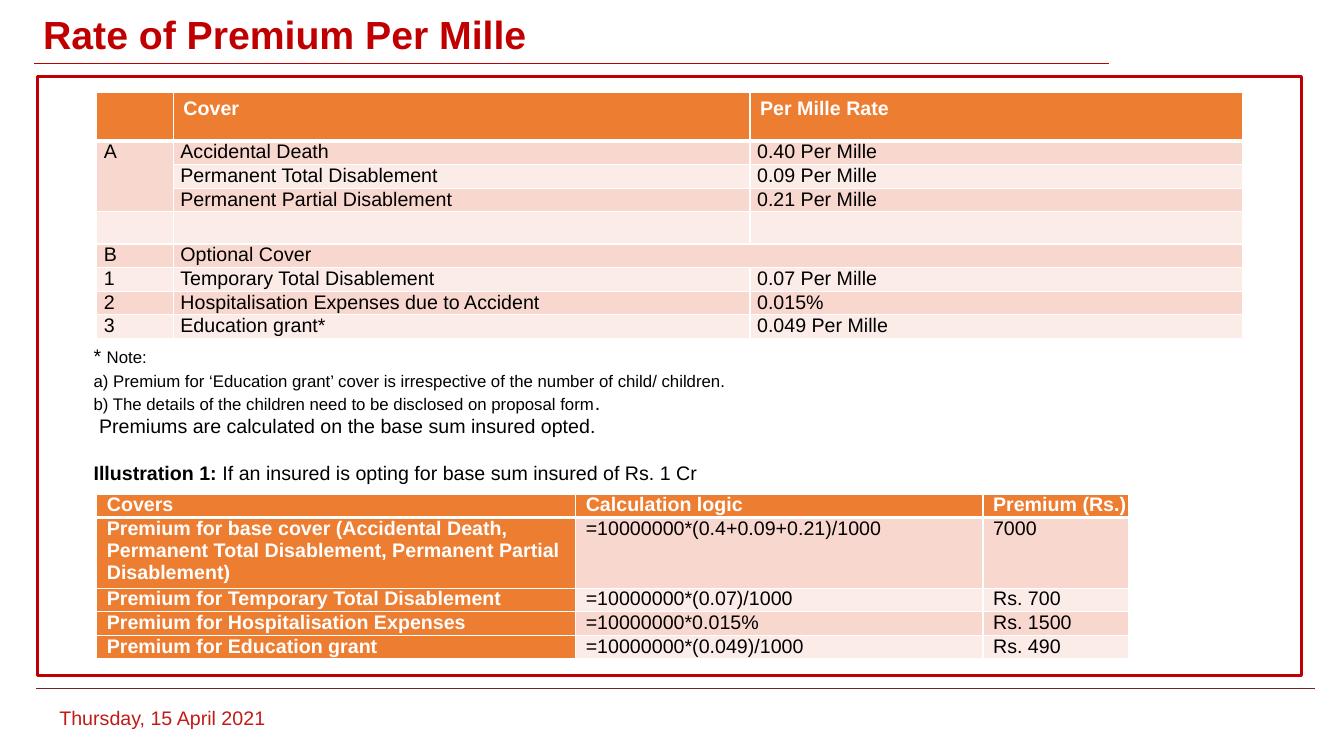
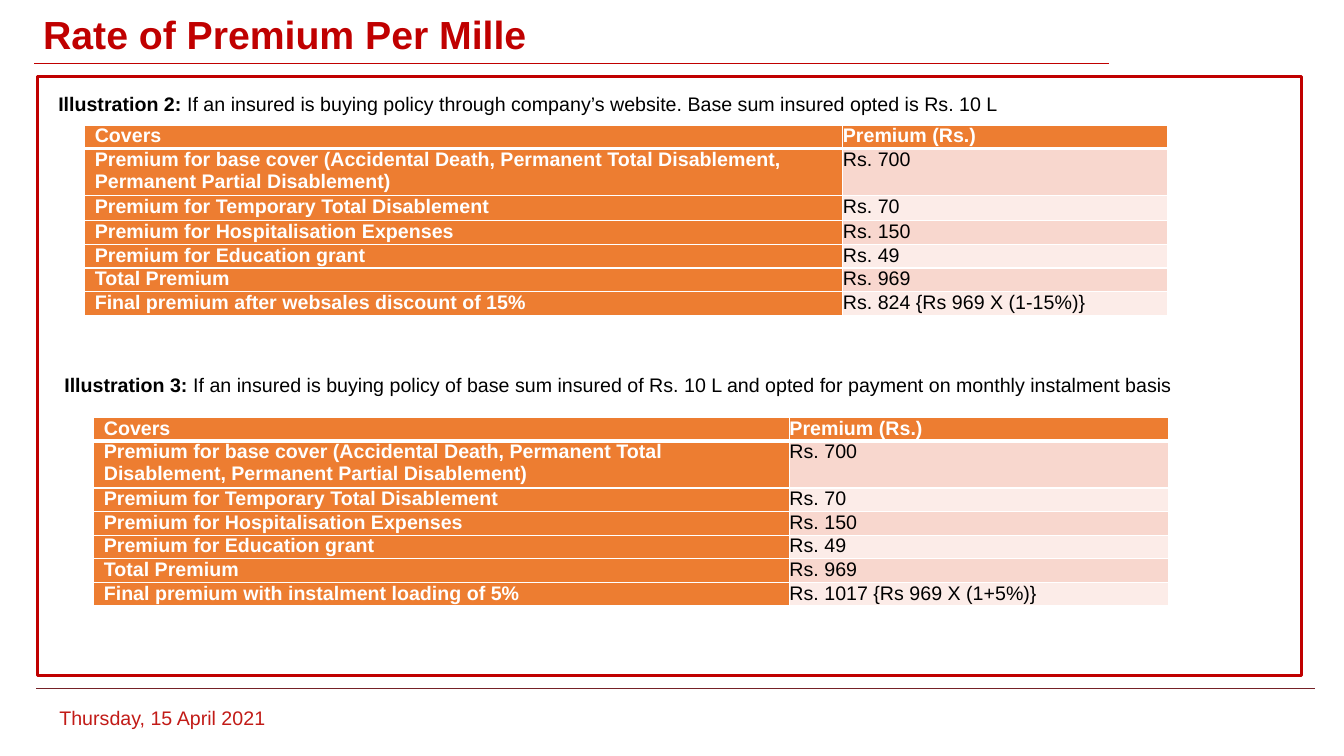
from dataclasses import dataclass

from lxml import etree
from pptx import Presentation
from pptx.dml.color import RGBColor
from pptx.enum.shapes import MSO_CONNECTOR, MSO_SHAPE
from pptx.enum.text import PP_ALIGN
from pptx.oxml.ns import qn
from pptx.util import Inches, Pt

STRAIGHT = MSO_CONNECTOR.STRAIGHT
RECTANGLE = MSO_SHAPE.RECTANGLE
LEFT, JUSTIFY = PP_ALIGN.LEFT, PP_ALIGN.JUSTIFY


@dataclass(frozen=True)
class Theme:
    font: str = "Arial"
    red: str = "C00000"
    footer_rule: str = "752127"
    date: str = "C21B17"
    orange: str = "ED7D31"
    dark_band: str = "F8D7CE"
    light_band: str = "FCECE8"
    white: str = "FFFFFF"
    black: str = "000000"
    title_size: float = 28
    body_size: float = 14
    note_size: float = 12
    rule_width: float = 0.5
    frame_width: float = 1.75
    cell_rule: float = 1
    header_rule: float = 3


THEME = Theme()
ROW = 0.22
BASE_COVER = ("Premium for base cover (Accidental Death, "
              "Permanent Total Disablement, Permanent Partial Disablement)")
TEMPORARY = "Premium for Temporary Total Disablement"
HOSPITAL = "Premium for Hospitalisation Expenses"
EDUCATION = "Premium for Education grant"

RATES = [
    ["", "Cover", "Per Mille Rate"],
    ["A", "Accidental Death", "0.40 Per Mille"],
    ["", "Permanent Total Disablement", "0.09 Per Mille"],
    ["", "Permanent Partial Disablement", "0.21 Per Mille"],
    ["", "", ""],
    ["B", "Optional Cover", ""],
    ["1", "Temporary Total Disablement", "0.07 Per Mille"],
    ["2", "Hospitalisation Expenses due to Accident", "0.015%"],
    ["3", "Education grant*", "0.049 Per Mille"],
]
CALCULATIONS = [
    ["Covers", "Calculation logic", "Premium (Rs.)"],
    [BASE_COVER, "=10000000*(0.4+0.09+0.21)/1000", "7000"],
    [TEMPORARY, "=10000000*(0.07)/1000", "Rs. 700"],
    [HOSPITAL, "=10000000*0.015%", "Rs. 1500"],
    [EDUCATION, "=10000000*(0.049)/1000", "Rs. 490"],
]
PREMIUMS = [
    ["Covers", "Premium (Rs.)"],
    [BASE_COVER, "Rs. 700"],
    [TEMPORARY, "Rs. 70"],
    [HOSPITAL, "Rs. 150"],
    [EDUCATION, "Rs. 49"],
    ["Total Premium", "Rs. 969"],
]


def color(value):
    return RGBColor.from_string(value)


def add_run(paragraph, text, size=THEME.body_size, bold=False, ink=THEME.black):
    run = paragraph.add_run()
    run.text = text
    run.font.name = THEME.font
    run.font.size = Pt(size)
    run.font.bold = bold
    run.font.color.rgb = color(ink)


def add_text(slide, box, paragraphs, align=LEFT):
    frame = slide.shapes.add_textbox(*map(Inches, box)).text_frame
    frame.word_wrap = True
    for index, (gap, runs) in enumerate(paragraphs):
        paragraph = frame.add_paragraph() if index else frame.paragraphs[0]
        paragraph.alignment = align
        if gap:
            paragraph.space_before = Pt(gap)
        for run in runs:
            add_run(paragraph, *run)
    return frame


def add_rule(slide, left, right, y, ink):
    ends = map(Inches, (left, y, right, y))
    rule = slide.shapes.add_connector(STRAIGHT, *ends)
    rule.line.color.rgb = color(ink)
    rule.line.width = Pt(THEME.rule_width)
    etree.SubElement(rule._element.spPr, qn("a:effectLst"))


def add_page(deck, title):
    slide = deck.slides.add_slide(deck.slide_layouts[6])
    add_rule(slide, 0.36, 13.04, 6.83, THEME.footer_rule)
    add_text(slide, (0.49, 6.95, 3.62, 0.34),
             [(0, [("Thursday, 15 April 2021", THEME.body_size, False, THEME.date)])])
    heading = add_text(slide, (0.33, 0.11, 11.5, 0.66),
                       [(0, [(title, THEME.title_size, True, THEME.red)])])
    heading.paragraphs[0].line_spacing = 0.9
    add_rule(slide, 0.34, 11, 0.63, THEME.red)
    frame = slide.shapes.add_shape(RECTANGLE, *map(Inches, (0.37, 0.76, 12.54, 5.94)))
    frame.shadow.inherit = False
    frame.fill.background()
    frame.line.color.rgb = color(THEME.red)
    frame.line.width = Pt(THEME.frame_width)
    return slide


def set_borders(cell, row):
    widths = {
        "L": THEME.cell_rule,
        "R": THEME.cell_rule,
        "T": THEME.header_rule if row == 1 else THEME.cell_rule,
        "B": THEME.header_rule if row == 0 else THEME.cell_rule,
    }
    properties = cell._tc.get_or_add_tcPr()
    for side, width in widths.items():
        line = etree.SubElement(properties, qn("a:ln" + side), w=str(Pt(width)))
        fill = etree.SubElement(line, qn("a:solidFill"))
        etree.SubElement(fill, qn("a:srgbClr"), val=THEME.white)


def fill_cell(cell, text, row, strong, insets):
    set_borders(cell, row)
    band = THEME.dark_band if row % 2 else THEME.light_band
    cell.fill.solid()
    cell.fill.fore_color.rgb = color(THEME.orange if strong else band)
    side, top = insets
    cell.margin_left = Inches(side)
    cell.margin_right = 0
    cell.margin_top = cell.margin_bottom = Inches(top)
    paragraph = cell.text_frame.paragraphs[0]
    if text:
        add_run(paragraph, text, THEME.body_size, strong,
                THEME.white if strong else THEME.black)
    else:
        etree.SubElement(paragraph._p, qn("a:endParaRPr"),
                         sz=str(THEME.body_size * 100))


def add_grid(slide, corner, widths, heights, rows, strong_at, insets_at):
    size = (sum(widths), sum(heights))
    table = slide.shapes.add_table(len(rows), len(widths),
                                   *map(Inches, corner + size)).table
    table.horz_banding = False
    for column, width in zip(table.columns, widths):
        column.width = Inches(width)
    for grid_row, height in zip(table.rows, heights):
        grid_row.height = Inches(height)
    for r, values in enumerate(rows):
        for c, value in enumerate(values):
            fill_cell(table.cell(r, c), value, r, strong_at(r, c), insets_at(r, c))
    return table


def add_rate_table(slide, corner):
    table = add_grid(
        slide, corner, (0.76, 5.72, 4.88),
        [0.48] + [ROW] * 3 + [0.32] + [ROW] * 4, RATES,
        lambda r, c: r == 0,
        lambda r, c: (0.07, 0) if r else (0.1, 0.05))
    table.cell(1, 0).merge(table.cell(3, 0))
    table.cell(5, 1).merge(table.cell(5, 2))


def add_premium_table(slide, corner, widths, heights, rows, value_inset):
    add_grid(slide, corner, widths, heights, rows,
             lambda r, c: r == 0 or c == 0,
             lambda r, c: (value_inset if c else 0.1, 0))


def illustration(number, text):
    return [(f"Illustration {number}: ", THEME.body_size, True),
            (text, THEME.body_size)]


def add_notes(slide, box):
    small = THEME.note_size
    add_text(slide, box, [
        (0, [("* ",), ("Note:", small)]),
        (2.3, [("a) Premium for ‘Education grant’ cover is irrespective "
                "of the number of child/ children.", small)]),
        (0, [("b) The details of the children need to be disclosed "
              "on proposal form", small), (".",)]),
        (0, [(" Premiums are calculated on the base sum insured opted.",)]),
        (16.5, illustration(1, "If an insured is opting for base sum insured of Rs. 1 Cr")),
    ], JUSTIFY)


def build_rates(deck, title):
    slide = add_page(deck, title)
    add_rate_table(slide, (0.96, 0.92))
    add_premium_table(slide, (0.96, 4.9), (4.75, 4.04, 1.44),
                      [ROW, 0.65] + [ROW] * 3, CALCULATIONS, 0.1)
    add_notes(slide, (0.83, 3.36, 10.51, 1.48))


def build_illustrations(deck, title):
    slide = add_page(deck, title)
    add_premium_table(
        slide, (0.84, 1.24), (7.52, 3.22), [ROW, 0.44, 0.25] + [ROW] * 4,
        PREMIUMS + [["Final premium after websales discount of 15%",
                     "Rs. 824 {Rs 969 X (1-15%)}"]], 0)
    add_premium_table(
        slide, (0.93, 4.14), (6.9, 3.76), [ROW, 0.44] + [ROW] * 5,
        PREMIUMS + [["Final premium with instalment loading of 5%",
                     "Rs. 1017 {Rs 969 X (1+5%)}"]], 0)
    add_text(slide, (0.48, 0.86, 11.34, 0.34), [(0, illustration(
        2, "If an insured is buying policy through company’s website. "
           "Base sum insured opted is Rs. 10 L"))])
    add_text(slide, (0.54, 3.65, 11.44, 0.34), [(0, illustration(
        3, "If an insured is buying policy of base sum insured of Rs. 10 L "
           "and opted for payment on monthly instalment basis"))])


def main():
    deck = Presentation()
    deck.slide_width = Inches(13.33)
    deck.slide_height = Inches(7.5)
    for build in (build_rates, build_illustrations):
        build(deck, "Rate of Premium Per Mille")
    deck.save("out.pptx")


if __name__ == "__main__":
    main()
